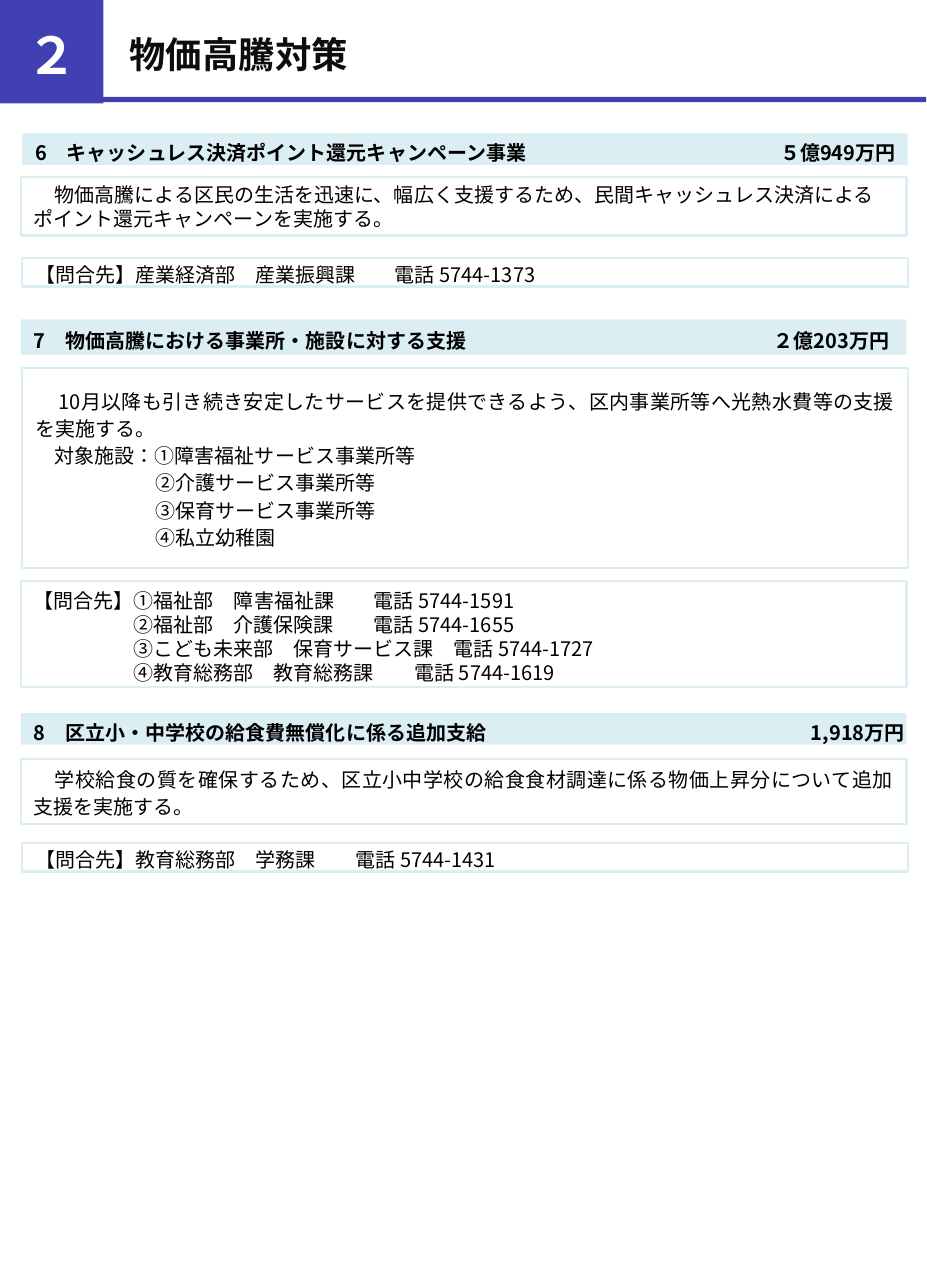
"""Builds the page on measures against rising prices."""
from lxml.etree import SubElement
from pptx import Presentation
from pptx.dml.color import RGBColor
from pptx.enum.lang import MSO_LANGUAGE_ID as Language
from pptx.enum.shapes import MSO_SHAPE as Shape
from pptx.enum.text import MSO_ANCHOR as Anchor, MSO_AUTO_SIZE as AutoSize, PP_ALIGN as Align
from pptx.oxml.ns import qn
from pptx.util import Cm, Inches, Pt

FONT = "Noto Sans CJK JP"
INDIGO = RGBColor(0x40, 0x40, 0xB3)
PALE_BLUE = RGBColor(0xDB, 0xEE, 0xF4)
WHITE = RGBColor(0xFF, 0xFF, 0xFF)
BLACK = RGBColor(0, 0, 0)
INK = RGBColor(0x0D, 0x0D, 0x0D)

CHAPTER, TITLE = "２", "物価高騰対策"

# Rows of text: (indent, text) or (indent, department, tab position, phone)
PROJECTS = [
    {
        "heading": ("6　キャッシュレス決済ポイント還元キャンペーン事業", 6.58, "５億949万円"),
        "heading_box": (0.17, 1.02, 0.24),
        "summary": [(0.16, "物価高騰による区民の生活を迅速に、幅広く支援するため、"
                           "民間キャッシュレス決済によるポイント還元キャンペーンを実施する。")],
        "summary_box": (0.16, 1.35, 0.45),
        "summary_style": (13.2, Align.LEFT),
        "contacts": [(0, "【問合先】産業経済部　産業振興課", 2.75, "電話 5744-1373")],
        "contacts_box": (0.17, 1.97, 0.22),
    },
    {
        "heading": ("7　物価高騰における事業所・施設に対する支援", 6.54, "２億203万円"),
        "heading_box": (0.16, 2.44, 0.27),
        "summary": [
            (0.18, "10月以降も引き続き安定したサービスを提供できるよう、"
                   "区内事業所等へ光熱水費等の支援を実施する。"),
            (0.15, "対象施設：①障害福祉サービス事業所等"),
            (0.92, "②介護サービス事業所等"),
            (0.92, "③保育サービス事業所等"),
            (0.92, "④私立幼稚園"),
        ],
        "summary_box": (0.17, 2.81, 1.53),
        "summary_style": (15, Align.JUSTIFY),
        "contacts": [
            (0, "【問合先】①福祉部　障害福祉課", 2.6, "電話 5744-1591"),
            (0.76, "②福祉部　介護保険課", 2.6, "電話 5744-1655"),
            (0.76, "③こども未来部　保育サービス課", 3.21, "電話 5744-1727"),
            (0.76, "④教育総務部　教育総務課", 2.91, "電話 5744-1619"),
        ],
        "contacts_box": (0.16, 4.44, 0.81),
    },
    {
        "heading": ("8　区立小・中学校の給食費無償化に係る追加支給", 6.66, "1,918万円"),
        "heading_box": (0.16, 5.45, 0.24),
        "summary": [(0.16, "学校給食の質を確保するため、区立小中学校の給食食材調達に係る"
                           "物価上昇分について追加支援を実施する。")],
        "summary_box": (0.16, 5.8, 0.5),
        "summary_style": (15, Align.JUSTIFY),
        "contacts": [(0, "【問合先】教育総務部　学務課", 2.45, "電話 5744-1431")],
        "contacts_box": (0.17, 6.44, 0.22),
    },
]
BOX_WIDTH = 6.77


def add_run(paragraph, text, size, color, bold=False):
    run = paragraph.add_run()
    run.text = text
    run.font.size, run.font.bold, run.font.name = Pt(size), bold, FONT
    run.font.color.rgb = color
    run.font.language_id = Language.JAPANESE
    SubElement(run.font._element, qn("a:ea"), typeface=FONT)


def set_frame(frame, margins):
    frame.word_wrap = True
    frame.auto_size = AutoSize.NONE
    frame.vertical_anchor = Anchor.MIDDLE
    (frame.margin_left, frame.margin_top,
     frame.margin_right, frame.margin_bottom) = map(Inches, margins)
    return frame


def add_rect(slide, bounds, fill, outline=None):
    rect = slide.shapes.add_shape(Shape.RECTANGLE, *map(Inches, bounds))
    rect.shadow.inherit = False
    rect.fill.solid()
    rect.fill.fore_color.rgb = fill
    if outline is None:
        rect.line.fill.background()
    else:
        rect.line.color.rgb = outline
        rect.line.width = Pt(1.25)
    return rect


def add_tab_stops(properties, stops):
    tabs = SubElement(properties, qn("a:tabLst"))
    for position, side in stops:
        SubElement(tabs, qn("a:tab"), pos=str(Inches(position)), algn=side)


def add_rows(rect, rows, margins, spacing=13.2, align=Align.LEFT, bold=False, tab_side="l"):
    frame = set_frame(rect.text_frame, margins)
    for number, (indent, text, *tabbed) in enumerate(rows):
        paragraph = frame.add_paragraph() if number else frame.paragraphs[0]
        paragraph.alignment = align
        paragraph.line_spacing = Pt(spacing)
        properties = paragraph._p.get_or_add_pPr()
        if tabbed:
            position, ending = tabbed
            lead = [(indent, "l")] if indent else []
            add_tab_stops(properties, lead + [(position, tab_side)])
            text = "\t" * len(lead) + text + "\t" + ending
        else:
            properties.set("marL", "0")
            properties.set("indent", str(Inches(indent)))
        add_run(paragraph, text, 11, BLACK, bold)


def add_banner(slide):
    badge = add_rect(slide, (0, 0, 0.79, 0.79), INDIGO)
    number = set_frame(badge.text_frame, (0.08, 0.08, 0.08, 0.04)).paragraphs[0]
    number.alignment = Align.CENTER
    add_run(number, CHAPTER, 28, WHITE, True)
    add_rect(slide, (0.78, 0.74, 6.3, 0.04), INDIGO)
    title = slide.shapes.title
    title.left, title.top, title.width, title.height = map(Inches, (0.79, 0, 6.3, 0.78))
    heading = set_frame(title.text_frame, (0.2, 0.08, 0.1, 0.04)).paragraphs[0]
    heading.alignment = Align.LEFT
    add_run(heading, TITLE, 20, INK, True)


def add_project(slide, project):
    def place(part, fill, outline=None):
        left, top, height = project[part]
        return add_rect(slide, (left, top, BOX_WIDTH, height), fill, outline)

    add_rows(place("heading_box", PALE_BLUE), [(0, *project["heading"])],
             (0.1, 0.05, 0, 0), bold=True, tab_side="r")
    add_rows(place("summary_box", WHITE, PALE_BLUE), project["summary"],
             (0.1, 0.04, 0.1, 0.04), *project["summary_style"])
    add_rows(place("contacts_box", WHITE, PALE_BLUE), project["contacts"],
             (0.1, 0.04, 0.1, 0))


def main():
    deck = Presentation()
    deck.slide_width, deck.slide_height = Cm(18), Cm(25)
    slide = deck.slides.add_slide(deck.slide_layouts[5])
    add_banner(slide)
    for project in PROJECTS:
        add_project(slide, project)
    deck.save("out.pptx")


if __name__ == "__main__":
    main()
